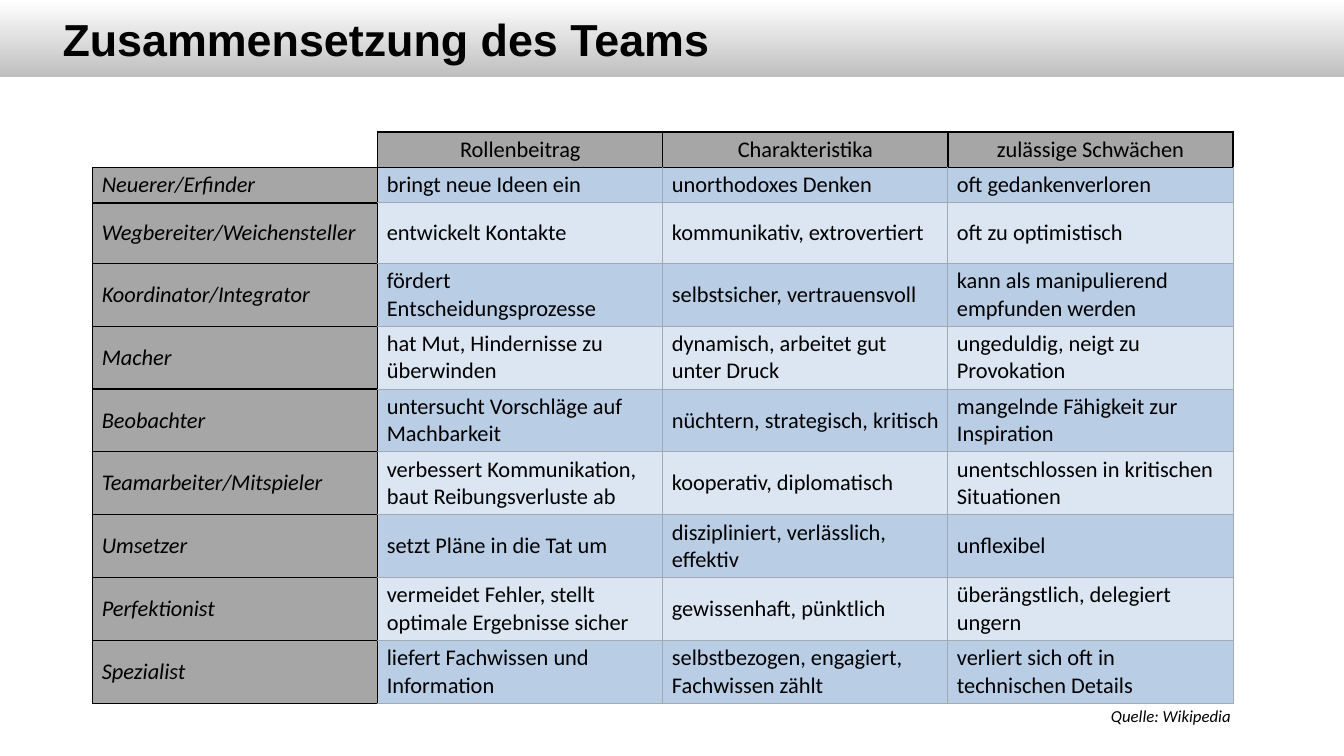
from lxml import etree
from pptx import Presentation
from pptx.dml.color import RGBColor
from pptx.enum.shapes import MSO_SHAPE
from pptx.enum.text import MSO_ANCHOR, MSO_AUTO_SIZE, PP_ALIGN
from pptx.oxml.ns import qn
from pptx.util import Inches, Pt

RECTANGLE = MSO_SHAPE.RECTANGLE
MIDDLE = MSO_ANCHOR.MIDDLE
LEFT, CENTER = PP_ALIGN.LEFT, PP_ALIGN.CENTER
FIT_SHAPE = MSO_AUTO_SIZE.SHAPE_TO_FIT_TEXT

BLACK, WHITE, HEADER_GRAY = "000000", "FFFFFF", "A6A6A6"
BAND_COLORS = ["DCE6F2", "B9CDE5"]
DARK_LINE, LIGHT_LINE = (BLACK, 1), ("A2A9B1", 0.75)

TEAM_ROLES = [
    ["", "Rollenbeitrag", "Charakteristika", "zulässige Schwächen"],
    ["Neuerer/Erfinder", "bringt neue Ideen ein", "unorthodoxes Denken", "oft gedankenverloren"],
    ["Wegbereiter/Weichensteller", "entwickelt Kontakte",
     "kommunikativ, extrovertiert", "oft zu optimistisch"],
    ["Koordinator/Integrator", "fördert Entscheidungsprozesse",
     "selbstsicher, vertrauensvoll", "kann als manipulierend empfunden werden"],
    ["Macher", "hat Mut, Hindernisse zu überwinden",
     "dynamisch, arbeitet gut unter Druck", "ungeduldig, neigt zu Provokation"],
    ["Beobachter", "untersucht Vorschläge auf Machbarkeit",
     "nüchtern, strategisch, kritisch", "mangelnde Fähigkeit zur Inspiration"],
    ["Teamarbeiter/Mitspieler", "verbessert Kommunikation, baut Reibungsverluste ab",
     "kooperativ, diplomatisch", "unentschlossen in kritischen Situationen"],
    ["Umsetzer", "setzt Pläne in die Tat um",
     "diszipliniert, verlässlich, effektiv", "unflexibel"],
    ["Perfektionist", "vermeidet Fehler, stellt optimale Ergebnisse sicher",
     "gewissenhaft, pünktlich", "überängstlich, delegiert ungern"],
    ["Spezialist", "liefert Fachwissen und Information",
     "selbstbezogen, engagiert, Fachwissen zählt", "verliert sich oft in technischen Details"],
]


def color(hex_string):
    return RGBColor.from_string(hex_string)


def set_borders(cell, left, right, top, bottom):
    """Give each side a (colour, points) line, or no line for None."""
    properties = cell._tc.get_or_add_tcPr()
    for side, line in zip("LRTB", (left, right, top, bottom)):
        border = etree.SubElement(properties, qn(f"a:ln{side}"))
        if line is None:
            etree.SubElement(border, qn("a:noFill"))
            continue
        border.set("w", str(Pt(line[1])))
        solid = etree.SubElement(border, qn("a:solidFill"))
        etree.SubElement(solid, qn("a:srgbClr"), val=line[0])


presentation = Presentation()
presentation.slide_width = Inches(13.33)
presentation.slide_height = Inches(7.5)
slide = presentation.slides.add_slide(presentation.slide_layouts[5])

# Title on a gradient band
band = slide.shapes.add_shape(RECTANGLE, 0, 0, presentation.slide_width, Inches(0.76))
band.shadow.inherit = False
band.line.fill.background()
band.fill.gradient()
band.fill.gradient_angle = 270
for stop, stop_color in zip(band.fill.gradient_stops, (WHITE, "BFBFBF")):
    stop.color.rgb = color(stop_color)
slide.shapes._spTree.insert(2, band._element)

title = slide.shapes.title
title.left, title.top = Inches(0.52), Inches(0)
title.width, title.height = Inches(8.92), Inches(0.76)
title.text_frame.text = "Zusammensetzung des Teams"
title.text_frame.vertical_anchor = MIDDLE
paragraph = title.text_frame.paragraphs[0]
paragraph.alignment = LEFT
paragraph.font.name = "Arial"
paragraph.font.size = Pt(32)
paragraph.font.bold = True
paragraph.font.color.rgb = color(BLACK)

# Table of team roles
table = slide.shapes.add_table(len(TEAM_ROLES), len(TEAM_ROLES[0]), Inches(0.92),
                               Inches(1.31), Inches(11.31), Inches(5.48)).table
table.first_row = False
table.horz_banding = False
for row_index, texts in enumerate(TEAM_ROLES):
    table.rows[row_index].height = Inches(0.34 if row_index < 2 else 0.6)
    for column_index, text in enumerate(texts):
        cell = table.cell(row_index, column_index)
        cell.vertical_anchor = MIDDLE
        cell.margin_left = cell.margin_right = Inches(0.09)
        cell.margin_top = cell.margin_bottom = Inches(0.04 if text else 0)
        is_header = row_index == 0 or column_index == 0
        if not text:
            set_borders(cell, None, DARK_LINE, None, DARK_LINE)
            fill_color = WHITE
        elif is_header:
            set_borders(cell, DARK_LINE, DARK_LINE, DARK_LINE, DARK_LINE)
            fill_color = HEADER_GRAY
        else:
            set_borders(cell, DARK_LINE if column_index == 1 else LIGHT_LINE, LIGHT_LINE,
                        DARK_LINE if row_index == 1 else LIGHT_LINE, LIGHT_LINE)
            fill_color = BAND_COLORS[row_index % 2]
        cell.fill.solid()
        cell.fill.fore_color.rgb = color(fill_color)
        if text:
            cell.text = text
            paragraph = cell.text_frame.paragraphs[0]
            paragraph.alignment = CENTER if row_index == 0 else LEFT
            paragraph.font.name = "Calibri"
            paragraph.font.size = Pt(16)
            paragraph.font.italic = column_index == 0
            paragraph.font.color.rgb = color(BLACK)

# Source line
source = slide.shapes.add_textbox(Inches(10.92), Inches(6.95), Inches(1.42), Inches(0.3))
source.text_frame.word_wrap = False
source.text_frame.auto_size = FIT_SHAPE
source.text_frame.text = "Quelle: Wikipedia"
paragraph = source.text_frame.paragraphs[0]
paragraph.font.name = "Calibri"
paragraph.font.size = Pt(12)
paragraph.font.italic = True
paragraph.font.color.rgb = color(BLACK)

presentation.save("out.pptx")
